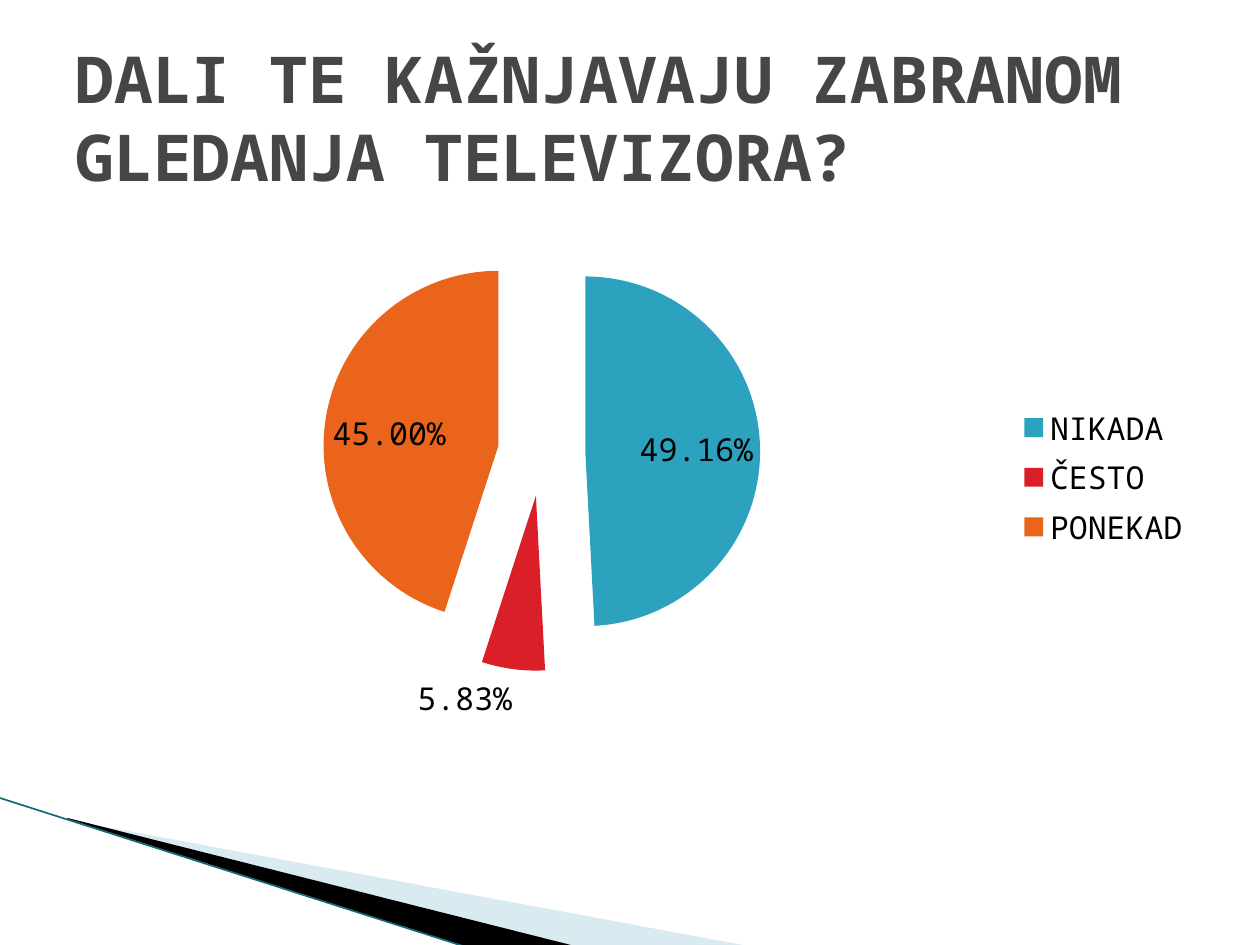
"""Build a survey slide with an exploded pie chart and a corner swoosh."""
from lxml import etree
from pptx import Presentation
from pptx.chart.data import CategoryChartData
from pptx.dml.color import RGBColor
from pptx.enum.chart import XL_CHART_TYPE, XL_LABEL_POSITION, XL_LEGEND_POSITION
from pptx.enum.shapes import MSO_CONNECTOR
from pptx.enum.text import MSO_ANCHOR, PP_ALIGN
from pptx.oxml.ns import qn
from pptx.util import Pt

PIE = XL_CHART_TYPE.PIE_EXPLODED
BEST = XL_LABEL_POSITION.BEST_FIT
RIGHT = XL_LEGEND_POSITION.RIGHT
LINE = MSO_CONNECTOR.STRAIGHT
MIDDLE = MSO_ANCHOR.MIDDLE
LEFT = PP_ALIGN.LEFT
FACE = "Noto Sans Mono"


def color(code):
    return RGBColor.from_string(code)


def style(font, size, code, bold=False):
    font.name, font.size, font.bold = FACE, Pt(size), bold
    font.color.rgb = color(code)


def write(frame, text, size=18, code="000000", bold=False, align=LEFT):
    frame.word_wrap = True
    para = frame.paragraphs[0]
    para.alignment = align
    run = para.add_run()
    run.text = text
    style(run.font, size, code, bold)


def place(item, box):
    item.left, item.top, item.width, item.height = map(Pt, box)


class Deck:
    def __init__(self):
        self.prs = Presentation()
        self.prs.slide_width, self.prs.slide_height = Pt(720), Pt(540)
        self.slide = self.prs.slides.add_slide(self.prs.slide_layouts[5])
        self.shapes = self.slide.shapes

    def wedge(self, box, points, code, alpha=None):
        start, *rest = [(Pt(x), Pt(y)) for x, y in points]
        pen = self.shapes.build_freeform(*start)
        pen.add_line_segments(rest, close=True)
        shape = pen.convert_to_shape()
        shape.shadow.inherit = False
        shape.fill.solid()
        shape.fill.fore_color.rgb = color(code)
        shape.line.fill.background()
        if alpha:
            tint = shape.fill._xPr.find(".//" + qn("a:srgbClr"))
            etree.SubElement(tint, qn("a:alpha")).set("val", str(alpha * 1000))
        left, top = shape.left, shape.top
        place(shape, box)
        track = shape._element.spPr.find(".//" + qn("a:path"))
        track.set("w", str(shape.width))
        track.set("h", str(shape.height))
        for spot in track.iter(qn("a:pt")):
            spot.set("x", str(int(spot.get("x")) + left - shape.left))
            spot.set("y", str(int(spot.get("y")) + top - shape.top))

    def rule(self, start, end, code, width):
        ends = [Pt(n) for n in start + end]
        line = self.shapes.add_connector(LINE, *ends)
        line.line.color.rgb = color(code)
        line.line.width = Pt(width)
        etree.SubElement(line._element.spPr, qn("a:effectLst"))

    def pie(self, box, cats, vals, fills):
        data = CategoryChartData(number_format="0.00%")
        data.categories = cats
        data.add_series("Series 1", vals)
        chart = self.shapes.add_chart(PIE, *map(Pt, box), data).chart
        style(chart.font, 18, "000000")
        chart.has_title = False
        chart.has_legend = True
        chart.legend.position = RIGHT
        chart.legend.include_in_layout = False
        plot = chart.plots[0]
        plot.vary_by_categories = True
        series = plot.series[0]
        for i, code in enumerate(fills):
            fill = series.points[i].format.fill
            fill.solid()
            fill.fore_color.rgb = color(code)
        series._element.find(qn("c:explosion")).set("val", "25")
        plot.has_data_labels = True
        labels = plot.data_labels
        labels.show_value, labels.show_percentage = True, False
        labels.number_format = "0.00%"
        labels.number_format_is_linked = False
        labels.position = BEST
        style(labels.font, 18, "000000")

    def title(self, box, text):
        head = self.shapes.title
        place(head, box)
        head.text_frame.vertical_anchor = MIDDLE
        write(head.text_frame, text, size=36.9, code="464646", bold=True)


def main():
    deck = Deck()
    deck.wedge((56.2, 393.8, 299.5, 113.8),
               [(39.6, 468.7), (428.4, 540.7), (328.3, 540.7), (39.6, 468)],
               "A0CBDC", alpha=40)
    deck.wedge((-4.3, 455.8, 299.5, 66.2),
               [(38.2, 467.3), (329, 540.7), (267.8, 541.4), (38.9, 468)],
               "000000")
    deck.rule((-0.7, 455.8), (267.1, 541.4), "16697A", 0.95)
    deck.pie((39.6, 123.8, 648, 298), ["NIKADA", "ČESTO", "PONEKAD"],
             [0.4916, 0.0583, 0.45], ["2DA2BF", "DA1F28", "EB641B"])
    deck.title((36, 21.6, 648, 90),
               "DALI TE KAŽNJAVAJU ZABRANOM GLEDANJA TELEVIZORA?")
    deck.prs.save("out.pptx")


if __name__ == "__main__":
    main()
